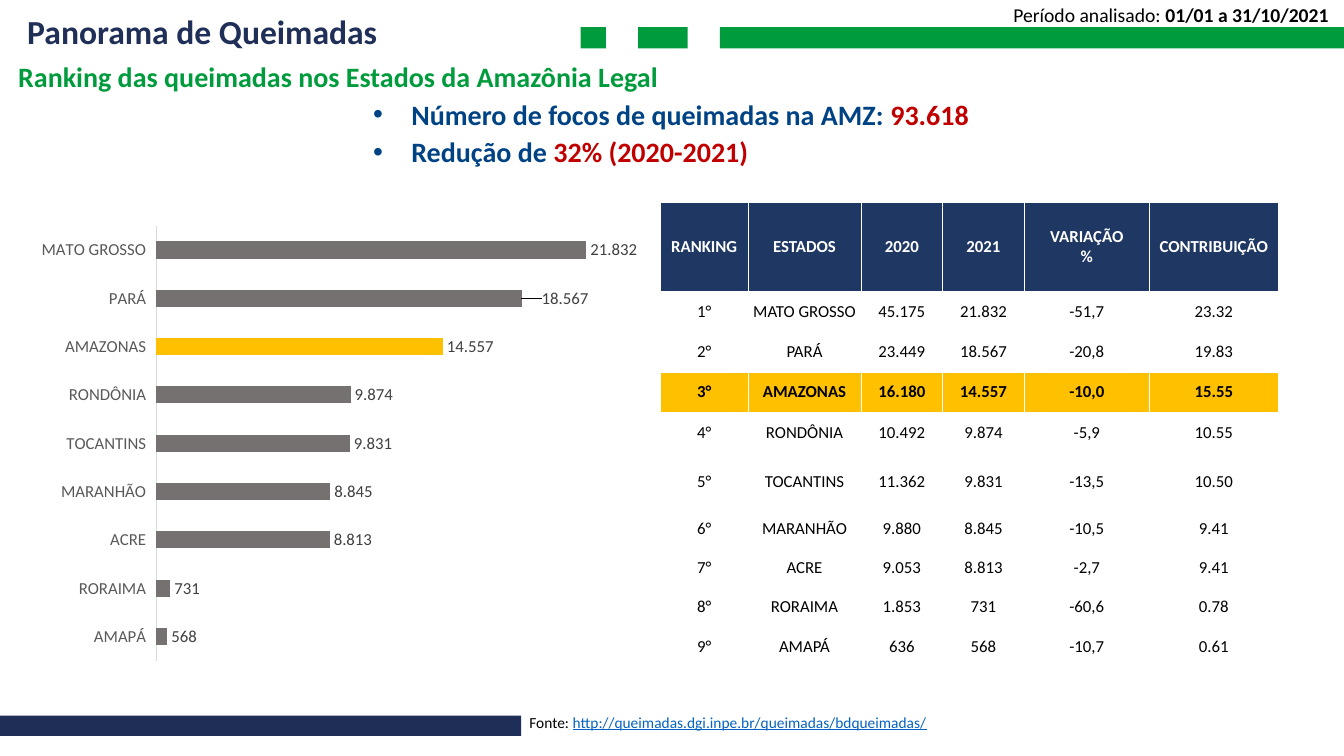
from lxml.etree import SubElement
from pptx import Presentation
from pptx.chart.data import CategoryChartData
from pptx.dml.color import RGBColor
from pptx.enum.chart import XL_CHART_TYPE, XL_LABEL_POSITION, XL_TICK_LABEL_POSITION, XL_TICK_MARK
from pptx.enum.shapes import MSO_SHAPE
from pptx.enum.text import MSO_ANCHOR, MSO_AUTO_SIZE, PP_ALIGN
from pptx.oxml import parse_xml
from pptx.oxml.ns import nsdecls, qn
from pptx.util import Inches, Pt

FONT = "Calibri"
GREEN, NAVY, HEADER, BLUE, RED = "009B3C", "1F2E57", "1F3763", "004385", "C00000"
AMBER, GREY, WHITE, BLACK, LINK = "FFC000", "767171", "FFFFFF", "000000", "0563C1"

TITLE = "Panorama de Queimadas"
SUBTITLE = "Ranking das queimadas nos Estados da Amazônia Legal"
FINDINGS = [
    ("Número de focos de queimadas na AMZ: ", "93.618"),
    ("Redução de ", "32% (2020-2021)"),
]
PERIOD = ("Período analisado: ", "01/01 a 31/10/2021")
SOURCE = ("Fonte: ", "http://queimadas.dgi.inpe.br/queimadas/bdqueimadas/")
HEADINGS = ["RANKING", "ESTADOS", "2020", "2021", "VARIAÇÃO\n%", "CONTRIBUIÇÃO"]
STATES = [
    ("MATO GROSSO", "45.175", "21.832", "-51,7", "23.32"),
    ("PARÁ", "23.449", "18.567", "-20,8", "19.83"),
    ("AMAZONAS", "16.180", "14.557", "-10,0", "15.55"),
    ("RONDÔNIA", "10.492", "9.874", "-5,9", "10.55"),
    ("TOCANTINS", "11.362", "9.831", "-13,5", "10.50"),
    ("MARANHÃO", "9.880", "8.845", "-10,5", "9.41"),
    ("ACRE", "9.053", "8.813", "-2,7", "9.41"),
    ("RORAIMA", "1.853", "731", "-60,6", "0.78"),
    ("AMAPÁ", "636", "568", "-10,7", "0.61"),
]
HIGHLIGHT = "AMAZONAS"
SHIFTED_LABEL = "PARÁ"
COLUMN_WIDTHS = [0.87, 1.12, 0.81, 0.81, 1.24, 1.28]
ROW_HEIGHTS = [0.88, 0.4, 0.4, 0.4, 0.41, 0.55, 0.4, 0.37, 0.4, 0.4]
BANDS = [  # left, top, width, height, colour
    (7.14, 0.27, 6.19, 0.21, GREEN),
    (6.33, 0.27, 0.49, 0.21, GREEN),
    (5.76, 0.27, 0.25, 0.21, GREEN),
    (0, 7.1, 5.17, 0.2, NAVY),
]
THOUSANDS = '[>=1000]0"."000;0'


def color(hex_value):
    return RGBColor.from_string(hex_value)


def style(font, size, hex_value, bold=False):
    font.name, font.size, font.bold = FONT, Pt(size), bold
    font.color.rgb = color(hex_value)


def add_run(paragraph, text, size, hex_value, bold=False):
    run = paragraph.add_run()
    run.text = text
    style(run.font, size, hex_value, bold)
    return run


def place(shape, left, top, width, height):
    shape.left, shape.top = Inches(left), Inches(top)
    shape.width, shape.height = Inches(width), Inches(height)


def set_margins(frame, top):
    frame.margin_left = frame.margin_right = frame.margin_bottom = 0
    frame.margin_top = Inches(top)


def set_bullet(paragraph, left, hanging, bullet=None):
    properties = paragraph._p.get_or_add_pPr()
    properties.set("marL", str(Inches(left)))
    properties.set("indent", str(Inches(-hanging)))
    if bullet:
        SubElement(properties, qn("a:buFont"), typeface="Arial")
        SubElement(properties, qn("a:buChar"), char=bullet)
    else:
        SubElement(properties, qn("a:buNone"))


def add_caption(slide, box, size, top_margin=0.01):
    """Add a text box and return its first paragraph."""
    frame = slide.shapes.add_textbox(*map(Inches, box)).text_frame
    frame.word_wrap = True
    set_margins(frame, top_margin)
    paragraph = frame.paragraphs[0]
    paragraph.space_before = Pt(1)
    paragraph.font.size = Pt(size)
    return paragraph


def add_texts(slide):
    title, body = slide.placeholders
    place(title, 0.17, 0.06, 4.01, 0.5)
    title.text_frame.auto_size = MSO_AUTO_SIZE.NONE
    title.text_frame.vertical_anchor = MSO_ANCHOR.MIDDLE
    heading = title.text_frame.paragraphs[0]
    heading.alignment = PP_ALIGN.LEFT
    add_run(heading, TITLE, 24, "202F58", True)

    place(body, 0.17, 0.54, 10.36, 1.15)
    frame = body.text_frame
    frame.auto_size = MSO_AUTO_SIZE.NONE
    set_margins(frame, 0.05)
    subtitle = frame.paragraphs[0]
    subtitle.space_before = Pt(3.8)
    set_bullet(subtitle, 0.01, 0)
    add_run(subtitle, SUBTITLE, 20, GREEN, True)
    for label, figure in FINDINGS:
        finding = frame.add_paragraph()
        finding.space_before = Pt(2.8)
        set_bullet(finding, 3.91, 0.38, "•")
        add_run(finding, label, 20, BLUE, True)
        add_run(finding, figure, 20, RED, True)

    period = add_caption(slide, (10.05, 0.02, 3.28, 0.25), 14)
    add_run(period, PERIOD[0], 14, BLACK)
    add_run(period, PERIOD[1], 14, BLACK, True)
    source = add_caption(slide, (5.25, 7.06, 4.2, 0.21), 11)
    add_run(source, SOURCE[0], 11, BLACK)
    add_run(source, SOURCE[1], 11, LINK).font.underline = True


def add_borders(cell):
    properties = cell._tc.get_or_add_tcPr()
    for side in "LRTB":
        properties.append(parse_xml(
            f'<a:ln{side} {nsdecls("a")} w="{Pt(0.5)}"><a:solidFill>'
            f'<a:srgbClr val="{WHITE}"/></a:solidFill></a:ln{side}>'))


def add_ranking_table(slide):
    rows = [HEADINGS] + [(f"{rank}°", *state) for rank, state in enumerate(STATES, 1)]
    table = slide.shapes.add_table(
        len(rows), len(HEADINGS), Inches(6.55), Inches(2.01),
        Inches(sum(COLUMN_WIDTHS)), Inches(sum(ROW_HEIGHTS))).table
    table.horz_banding = table.first_row = False
    for column, width in zip(table.columns, COLUMN_WIDTHS):
        column.width = Inches(width)
    for r, (row, height) in enumerate(zip(rows, ROW_HEIGHTS)):
        table.rows[r].height = Inches(height)
        fill = HEADER if r == 0 else AMBER if HIGHLIGHT in row else None
        for c, content in enumerate(row):
            cell = table.cell(r, c)
            set_margins(cell, 0)
            cell.vertical_anchor = MSO_ANCHOR.MIDDLE
            add_borders(cell)
            if fill:
                cell.fill.solid()
                cell.fill.fore_color.rgb = color(fill)
            else:
                cell.fill.background()
            for i, line in enumerate(content.split("\n")):
                frame = cell.text_frame
                paragraph = frame.add_paragraph() if i else frame.paragraphs[0]
                paragraph.alignment = PP_ALIGN.CENTER
                add_run(paragraph, line, 12, BLACK if r else WHITE, bool(fill))


def layout_xml(inner=False, **shares):
    """Build a manual chart layout from shares of the chart's size."""
    parts = '<c:layoutTarget val="inner"/>' if inner else ""
    if inner:
        parts += '<c:xMode val="edge"/><c:yMode val="edge"/>'
    parts += "".join(f'<c:{key} val="{share}"/>' for key, share in shares.items())
    return parse_xml(f'<c:layout {nsdecls("c")}><c:manualLayout>{parts}</c:manualLayout></c:layout>')


def add_fires_chart(slide):
    ascending = STATES[::-1]
    names = [state[0] for state in ascending]
    data = CategoryChartData()
    data.categories = names
    data.add_series("2021", [int(state[2].replace(".", "")) for state in ascending])
    chart = slide.shapes.add_chart(XL_CHART_TYPE.BAR_CLUSTERED, *map(Inches, (0.35, 2.16, 6.21, 4.49)), data).chart
    chart.has_legend = chart.has_title = False
    style(chart.font, 10, BLACK)

    states, fires = chart.category_axis, chart.value_axis
    states.major_tick_mark = XL_TICK_MARK.NONE
    states.tick_label_position = XL_TICK_LABEL_POSITION.LOW
    style(states.tick_labels.font, 12, "595959")
    states.format.line.color.rgb = color("D9D9D9")
    states.format.line.width = Pt(0.75)
    fires.visible = fires.has_major_gridlines = False
    fires.minimum_scale, fires.maximum_scale = 0, 25000

    plot = chart.plots[0]
    plot.gap_width, plot.vary_by_categories = 182, False
    series = plot.series[0]
    series.format.fill.solid()
    series.format.fill.fore_color.rgb = color(GREY)
    highlight = series.points[names.index(HIGHLIGHT)].format.fill
    highlight.solid()
    highlight.fore_color.rgb = color(AMBER)

    labels = series.data_labels
    labels.show_value = True
    labels.number_format, labels.number_format_is_linked = THOUSANDS, False
    labels.position = XL_LABEL_POSITION.OUTSIDE_END
    style(labels.font, 12, "404040")
    index = names.index(SHIFTED_LABEL)
    shifted = series.points[index].data_label
    style(shifted.font, 12, "404040")
    shifted.position = XL_LABEL_POSITION.OUTSIDE_END
    label_xml = labels._element.find(qn("c:dLbl"))
    label_xml.insert(1, layout_xml(x=0.025, y=0))
    label_xml.insert(2, parse_xml(
        f"<c:numFmt {nsdecls('c')} formatCode='{THOUSANDS.replace('>', '&gt;')}' sourceLinked='0'/>"))

    area = chart._chartSpace.chart.plotArea
    for automatic in area.findall(qn("c:layout")):
        area.remove(automatic)
    area.insert(0, layout_xml(inner=True, x=0.193, y=0.018, w=0.787, h=0.961))


def main():
    deck = Presentation()
    deck.slide_width, deck.slide_height = Inches(13.33), Inches(7.5)
    slide = deck.slides.add_slide(deck.slide_layouts[1])
    for *box, fill in BANDS:
        band = slide.shapes.add_shape(MSO_SHAPE.RECTANGLE, *map(Inches, box))
        band.shadow.inherit = False
        band.fill.solid()
        band.fill.fore_color.rgb = color(fill)
        band.line.fill.background()
    add_ranking_table(slide)
    add_texts(slide)
    add_fires_chart(slide)
    deck.save("out.pptx")


if __name__ == "__main__":
    main()
